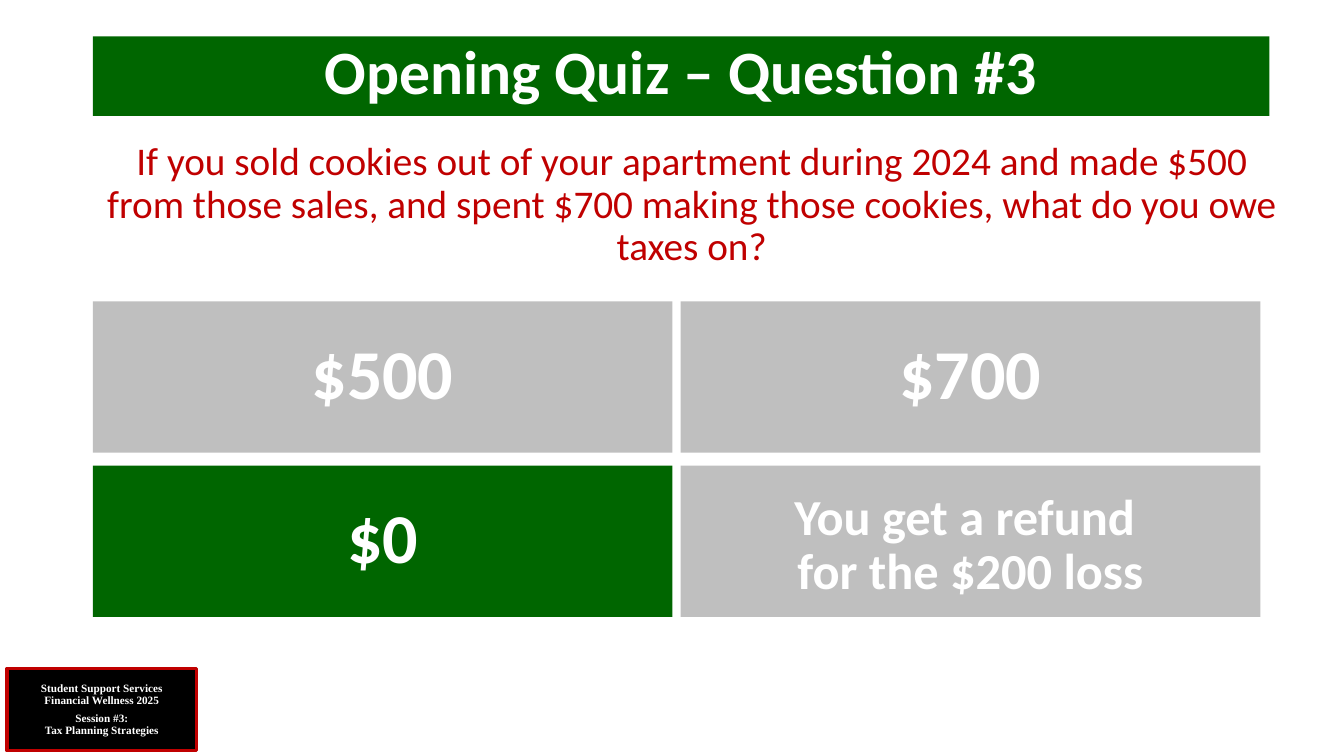
from dataclasses import dataclass

from pptx import Presentation
from pptx.dml.color import RGBColor
from pptx.enum import shapes, text
from pptx.util import Inches, Pt


@dataclass(frozen=True)
class Theme:
    green: str = "006600"
    grey: str = "BFBFBF"
    red: str = "C00000"
    black: str = "000000"
    white: str = "FFFFFF"
    body_font: str = "Calibri"
    badge_font: str = "Times New Roman"
    title_size: int = 44
    question_size: int = 28
    amount_size: int = 50
    phrase_size: int = 36
    badge_size: int = 8


@dataclass(frozen=True)
class Style:
    font: str
    size: int
    color: str
    bold: bool = True
    anchor: text.MSO_ANCHOR = text.MSO_ANCHOR.MIDDLE


@dataclass(frozen=True)
class Answer:
    label: str
    size: int
    fill: str
    inset_top: float = 0.05


THEME = Theme()
LEFT = 0.92
ANSWER_TOP, ANSWER_WIDTH, ANSWER_HEIGHT = 2.99, 5.75, 1.5
COLUMN_STEP, ROW_STEP = 5.83, 1.63

ANSWERS = [
    Answer("$500", THEME.amount_size, THEME.grey),
    Answer("$700", THEME.amount_size, THEME.grey),
    Answer("$0", THEME.amount_size, THEME.green),
    Answer("You get a refund \vfor the $200 loss", THEME.phrase_size, THEME.grey, 0.15),
]


def paint(shape, fill: str) -> None:
    shape.fill.solid()
    shape.fill.fore_color.rgb = RGBColor.from_string(fill)


def write(shape, wording: str, style: Style) -> None:
    """Set centred text; line feeds part paragraphs, vertical tabs part lines."""
    frame = shape.text_frame
    frame.text = wording
    frame.word_wrap = True
    frame.auto_size = text.MSO_AUTO_SIZE.NONE
    frame.vertical_anchor = style.anchor
    for para in frame.paragraphs:
        para.alignment = text.PP_ALIGN.CENTER
        para.line_spacing = 0.9
        para.space_before = Pt(0)
        for span in para.runs:
            span.font.name = style.font
            span.font.size = Pt(style.size)
            span.font.bold = style.bold
            span.font.color.rgb = RGBColor.from_string(style.color)


def place(shape, left: float, top: float, width: float, height: float) -> None:
    shape.left, shape.top = Inches(left), Inches(top)
    shape.width, shape.height = Inches(width), Inches(height)


def add_panel(page, left: float, top: float, width: float, height: float, fill: str):
    panel = page.shapes.add_shape(
        shapes.MSO_SHAPE.RECTANGLE, Inches(left), Inches(top), Inches(width), Inches(height)
    )
    panel.shadow.inherit = False
    panel.line.fill.background()
    paint(panel, fill)
    return panel


def add_badge(page) -> None:
    badge = add_panel(page, 0.07, 6.63, 1.88, 0.82, THEME.black)
    badge.line.color.rgb = RGBColor.from_string(THEME.red)
    badge.line.width = Pt(2.25)
    write(
        badge,
        "Student Support Services\nFinancial Wellness 2025\nSession #3:\vTax Planning Strategies",
        Style(THEME.badge_font, THEME.badge_size, THEME.white),
    )
    badge.text_frame.paragraphs[2].space_before = Pt(4)


def add_title(page) -> None:
    title = page.shapes.title
    place(title, LEFT, 0.36, 11.67, 0.79)
    paint(title, THEME.green)
    write(
        title,
        "Opening Quiz – Question #3",
        Style(THEME.body_font, THEME.title_size, THEME.white, anchor=text.MSO_ANCHOR.TOP),
    )


def add_question(page) -> None:
    box = page.shapes.add_textbox(Inches(LEFT), Inches(1.36), Inches(11.88), Inches(1.5))
    write(
        box,
        "If you sold cookies out of your apartment during 2024 and made $500 from those "
        "sales, and spent $700 making those cookies, what do you owe taxes on?",
        Style(THEME.body_font, THEME.question_size, THEME.red, False, text.MSO_ANCHOR.TOP),
    )


def add_answers(page) -> None:
    for index, answer in enumerate(ANSWERS):
        row, column = divmod(index, 2)
        panel = add_panel(
            page,
            LEFT + column * COLUMN_STEP,
            ANSWER_TOP + row * ROW_STEP,
            ANSWER_WIDTH,
            ANSWER_HEIGHT,
            answer.fill,
        )
        write(panel, answer.label, Style(THEME.body_font, answer.size, THEME.white))
        panel.text_frame.margin_top = Inches(answer.inset_top)


def main() -> None:
    deck = Presentation()
    deck.slide_width, deck.slide_height = Inches(13.33), Inches(7.5)
    page = deck.slides.add_slide(deck.slide_layouts[5])

    # Heading and question
    add_title(page)
    add_question(page)

    # Answer grid, with the right answer in green
    add_answers(page)

    # Session badge in the corner
    add_badge(page)

    deck.save("out.pptx")


if __name__ == "__main__":
    main()
